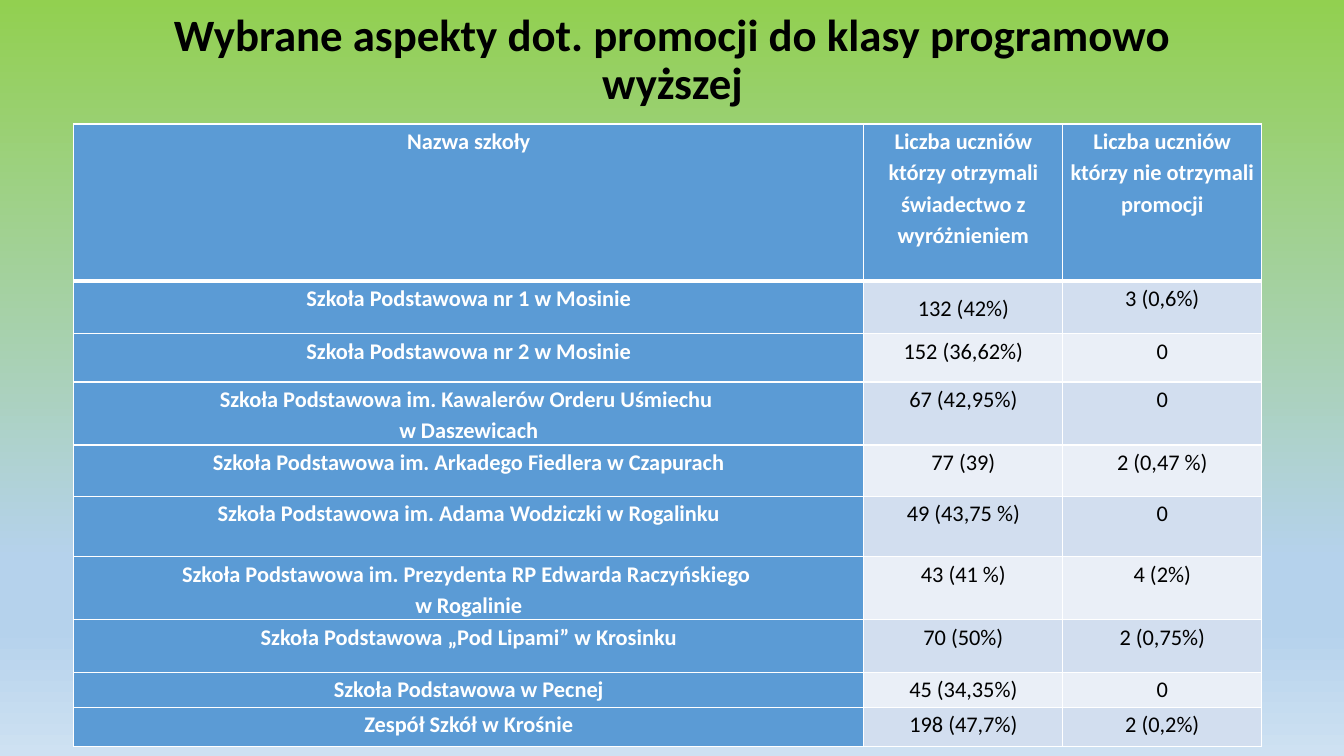
"""Build a slide with a table of school promotion results."""
from lxml.etree import SubElement
from pptx import Presentation
from pptx.dml.color import RGBColor
from pptx.enum.text import MSO_ANCHOR, MSO_AUTO_SIZE, PP_ALIGN
from pptx.oxml.ns import qn
from pptx.util import Inches, Pt

BLACK = RGBColor(0x00, 0x00, 0x00)
WHITE = RGBColor(0xFF, 0xFF, 0xFF)
BLUE = RGBColor(0x5B, 0x9B, 0xD5)
BANDS = (RGBColor(0xEA, 0xEF, 0xF7), RGBColor(0xD2, 0xDE, 0xEF))
GREEN = RGBColor(0x92, 0xD0, 0x50)
SKY = RGBColor(0xB5, 0xD2, 0xEC)
PALE = RGBColor(0xCE, 0xE1, 0xF2)
BACKDROP = ((0, GREEN), (74, SKY), (83, SKY), (100, PALE))

FONT = "Calibri"
WIDTH, HEIGHT = Inches(13.33), Inches(7.5)
COLUMNS = (58.8, 14.8, 14.8)
ROWS = (20.8, 6.93, 6.4, 8.13, 6.8, 8, 8.27, 6.93, 4.67, 5.2)

TITLE = "Wybrane aspekty dot. promocji do klasy programowo wyższej"
SCHOOLS = (
    ("Nazwa szkoły", "Liczba uczniów którzy otrzymali świadectwo z wyróżnieniem",
     "Liczba uczniów którzy nie otrzymali promocji"),
    ("Szkoła Podstawowa nr 1 w Mosinie", "132 (42%)", "3 (0,6%)"),
    ("Szkoła Podstawowa nr 2 w Mosinie", "152 (36,62%)", "0"),
    ("Szkoła Podstawowa im. Kawalerów Orderu Uśmiechu \nw Daszewicach",
     "67 (42,95%)", "0"),
    ("Szkoła Podstawowa im. Arkadego Fiedlera w Czapurach", "77 (39)", "2 (0,47 %)"),
    ("Szkoła Podstawowa im. Adama Wodziczki w Rogalinku", "49 (43,75 %)", "0"),
    ("Szkoła Podstawowa im. Prezydenta RP Edwarda Raczyńskiego \nw Rogalinie",
     "43 (41 %)", "4 (2%)"),
    ("Szkoła Podstawowa „Pod Lipami” w Krosinku", "70 (50%)", "2 (0,75%)"),
    ("Szkoła Podstawowa w Pecnej", "45 (34,35%)", "0"),
    ("Zespół Szkół w Krośnie", "198 (47,7%)", "2 (0,2%)"),
)


def across(percent):
    return int(WIDTH * percent / 100)


def down(percent):
    return int(HEIGHT * percent / 100)


def paint_background(s):
    fill = s.background.fill
    fill.gradient()
    fill.gradient_angle = 270
    stops = next(s.element.iter(qn("a:gsLst")))
    for stop in list(stops):
        stops.remove(stop)
    for percent, color in BACKDROP:
        stop = SubElement(stops, qn("a:gs"), pos=str(percent * 1000))
        SubElement(stop, qn("a:srgbClr"), val=str(color))


def write(p, text, size, color, bold, spacing):
    p.alignment = PP_ALIGN.CENTER
    p.line_spacing = spacing
    for i, line in enumerate(text.split("\n")):
        if i:
            p.add_line_break()
        r = p.add_run()
        r.text = line
        r.font.name = FONT
        r.font.size = Pt(size)
        r.font.bold = bold
        r.font.color.rgb = color


def add_title(s):
    sp = s.shapes.title
    sp.left, sp.top = across(6.9), down(3.2)
    sp.width, sp.height = across(86.27), down(9.73)
    tf = sp.text_frame
    tf.word_wrap = True
    tf.auto_size = MSO_AUTO_SIZE.NONE
    tf.vertical_anchor = MSO_ANCHOR.MIDDLE
    write(tf.paragraphs[0], TITLE, 32, BLACK, True, 0.9)


def draw_borders(cell, row):
    props = cell._tc.get_or_add_tcPr()
    thick = {(0, "lnB"), (1, "lnT")}
    for side in ("lnL", "lnR", "lnT", "lnB"):
        points = 3 if (row, side) in thick else 1
        line = SubElement(props, qn(f"a:{side}"), w=str(Pt(points)))
        fill = SubElement(line, qn("a:solidFill"))
        SubElement(fill, qn("a:srgbClr"), val=str(WHITE))


def fill_cell(cell, text, row, col):
    heading = row == 0 or col == 0
    draw_borders(cell, row)
    cell.fill.solid()
    cell.fill.fore_color.rgb = BLUE if heading else BANDS[row % 2]
    cell.margin_left = cell.margin_right = Inches(0.07)
    cell.margin_top = cell.margin_bottom = 0
    p = cell.text_frame.paragraphs[0]
    p.space_after = Pt(10)
    spacing = 1.5 if (row, col) == (1, 1) else 1.15
    write(p, text, 16, WHITE if heading else BLACK, heading, spacing)


def add_schools(s):
    frame = s.shapes.add_table(len(ROWS), len(COLUMNS), across(5.48), down(16.4),
                               across(sum(COLUMNS)), down(sum(ROWS)))
    table = frame.table
    for column, share in zip(table.columns, COLUMNS):
        column.width = across(share)
    for i, (row, share, texts) in enumerate(zip(table.rows, ROWS, SCHOOLS)):
        row.height = down(share)
        for j, (cell, text) in enumerate(zip(row.cells, texts)):
            fill_cell(cell, text, i, j)


def main():
    prs = Presentation()
    prs.slide_width, prs.slide_height = WIDTH, HEIGHT
    s = prs.slides.add_slide(prs.slide_layouts[5])
    paint_background(s)
    add_title(s)
    add_schools(s)
    prs.save("out.pptx")


if __name__ == "__main__":
    main()
